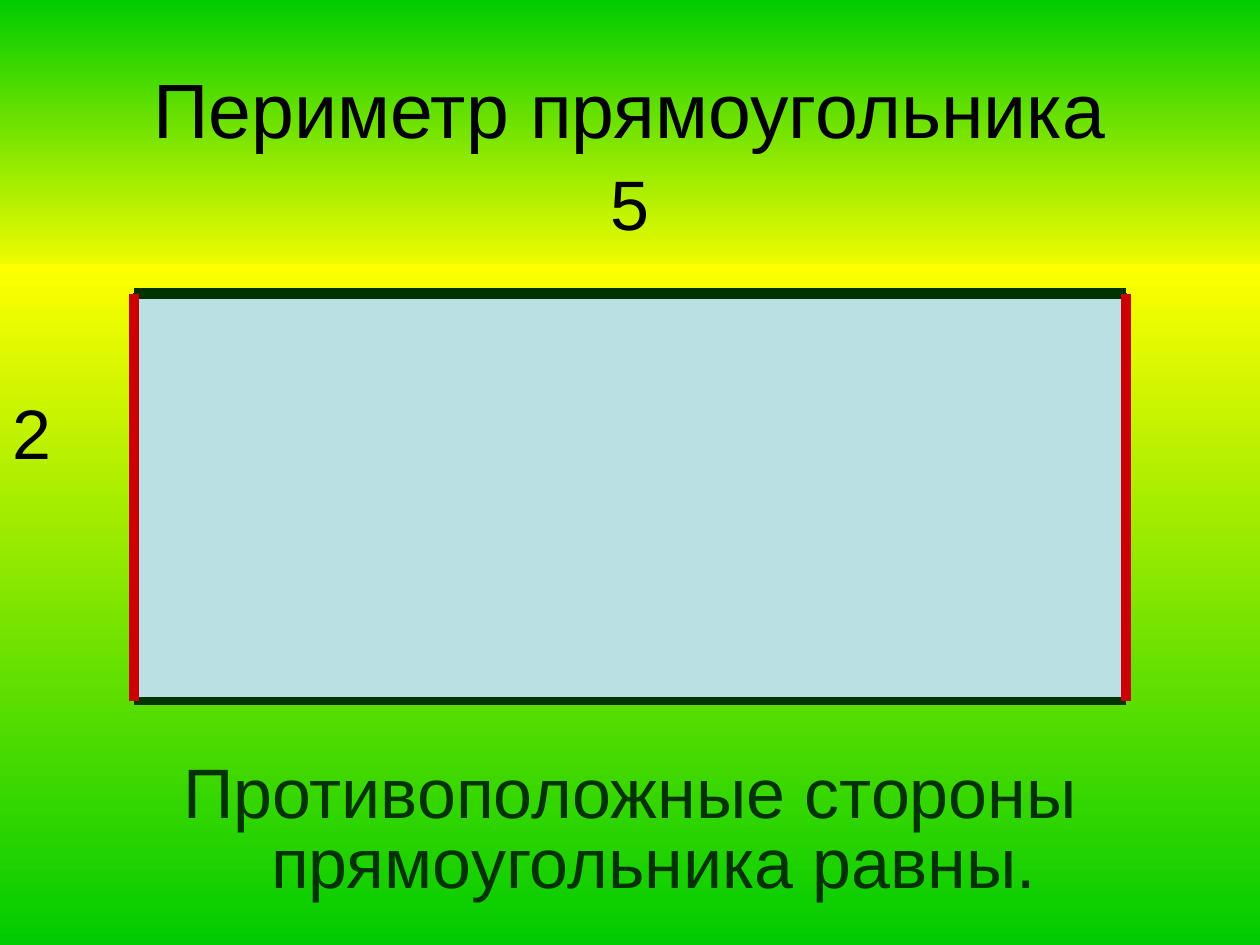
from dataclasses import dataclass

from lxml.etree import SubElement
from pptx import Presentation
from pptx.dml.color import RGBColor
from pptx.enum.shapes import MSO_CONNECTOR, MSO_SHAPE
from pptx.enum.text import MSO_ANCHOR, PP_ALIGN
from pptx.oxml.ns import qn
from pptx.util import Cm, Pt


@dataclass(frozen=True)
class Theme:
    font: str = "Arial"
    title_size: float = 44
    text_size: float = 40
    black: str = "000000"
    green: str = "00CC00"
    yellow: str = "FFFF00"
    dark_green: str = "003300"
    red: str = "CC0000"
    pale_blue: str = "BBE0E3"


THEME = Theme()
WIDTH, HEIGHT = 25.4, 19.05

TITLE = "Периметр прямоугольника"
LENGTH, BREADTH = "5", "2"
CAPTION = "Противоположные стороны прямоугольника равны."

# top, height, upper colour, lower colour
PANELS = [
    (0, 5.72, THEME.green, THEME.yellow),
    (5.33, 13.72, THEME.yellow, THEME.green),
]

LEFT, TOP, RIGHT, BOTTOM = 2.7, 5.92, 22.7, 14.13
# start, end, colour, line width in points
SIDES = [
    ((LEFT, TOP), (RIGHT, TOP), THEME.dark_green, 6),
    ((LEFT, BOTTOM), (RIGHT, BOTTOM), THEME.dark_green, 4.5),
    ((LEFT, TOP), (LEFT, BOTTOM), THEME.red, 6),
    ((RIGHT, TOP), (RIGHT, BOTTOM), THEME.red, 6),
]


def rgb(value):
    return RGBColor.from_string(value)


def add_rectangle(slide, left, top, width, height):
    shape = slide.shapes.add_shape(
        MSO_SHAPE.RECTANGLE, Cm(left), Cm(top), Cm(width), Cm(height))
    shape.shadow.inherit = False
    return shape


def add_panel(slide, top, height, upper, lower):
    """Add a full-width band whose colour runs from upper to lower."""
    panel = add_rectangle(slide, 0, top, WIDTH, height)
    panel.line.fill.background()
    panel.fill.gradient()
    panel.fill.gradient_angle = 270
    for stop, colour in zip(panel.fill.gradient_stops, (upper, lower)):
        stop.color.rgb = rgb(colour)
    return panel


def add_side(slide, start, end, colour, width):
    side = slide.shapes.add_connector(
        MSO_CONNECTOR.STRAIGHT, *(Cm(value) for value in start + end))
    side.line.color.rgb = rgb(colour)
    side.line.width = Pt(width)
    SubElement(side._element.spPr, qn("a:effectLst"))


def write(paragraph, text, size=THEME.text_size, colour=THEME.black,
          align=PP_ALIGN.LEFT, line_spacing=1.0, space_before=0, hanging=0):
    """Put text in a paragraph; hanging is the indent of later lines in cm."""
    paragraph.alignment = align
    paragraph.line_spacing = line_spacing
    paragraph.space_before = Pt(space_before)
    if hanging:
        properties = paragraph._p.get_or_add_pPr()
        properties.set("marL", str(Cm(hanging)))
        properties.set("indent", str(-Cm(hanging)))
    run = paragraph.add_run()
    run.text = text
    run.font.name = THEME.font
    run.font.size = Pt(size)
    run.font.color.rgb = rgb(colour)


def prepare_frame(shape, anchor=MSO_ANCHOR.TOP, margin_top=0):
    frame = shape.text_frame
    frame.word_wrap = True
    frame.vertical_anchor = anchor
    frame.margin_top = Cm(margin_top)
    frame.margin_bottom = 0
    return frame


def add_text_box(slide, left, top, width, height, text, anchor, **text_format):
    box = slide.shapes.add_textbox(Cm(left), Cm(top), Cm(width), Cm(height))
    write(prepare_frame(box, anchor).paragraphs[0], text, **text_format)


def main():
    presentation = Presentation()
    presentation.slide_width, presentation.slide_height = Cm(WIDTH), Cm(HEIGHT)
    slide = presentation.slides.add_slide(presentation.slide_layouts[6])

    title_panel, _ = [add_panel(slide, *panel) for panel in PANELS]
    frame = prepare_frame(title_panel, margin_top=1.24)
    write(frame.paragraphs[0], TITLE, size=THEME.title_size,
          align=PP_ALIGN.CENTER)
    write(frame.add_paragraph(), LENGTH, align=PP_ALIGN.CENTER,
          space_before=3.6)

    rectangle = add_rectangle(slide, LEFT, TOP, RIGHT - LEFT, BOTTOM - TOP)
    rectangle.fill.solid()
    rectangle.fill.fore_color.rgb = rgb(THEME.pale_blue)
    rectangle.line.color.rgb = rgb(THEME.black)
    rectangle.line.width = Pt(0.75)
    for side in SIDES:
        add_side(slide, *side)

    add_text_box(slide, 0, 7.85, LEFT, 1.63, BREADTH, MSO_ANCHOR.TOP)
    add_text_box(slide, 0, 15, WIDTH, 3.19, CAPTION, MSO_ANCHOR.BOTTOM,
                 colour=THEME.dark_green, align=PP_ALIGN.CENTER,
                 line_spacing=0.83, hanging=0.95)

    presentation.save("out.pptx")


if __name__ == "__main__":
    main()
